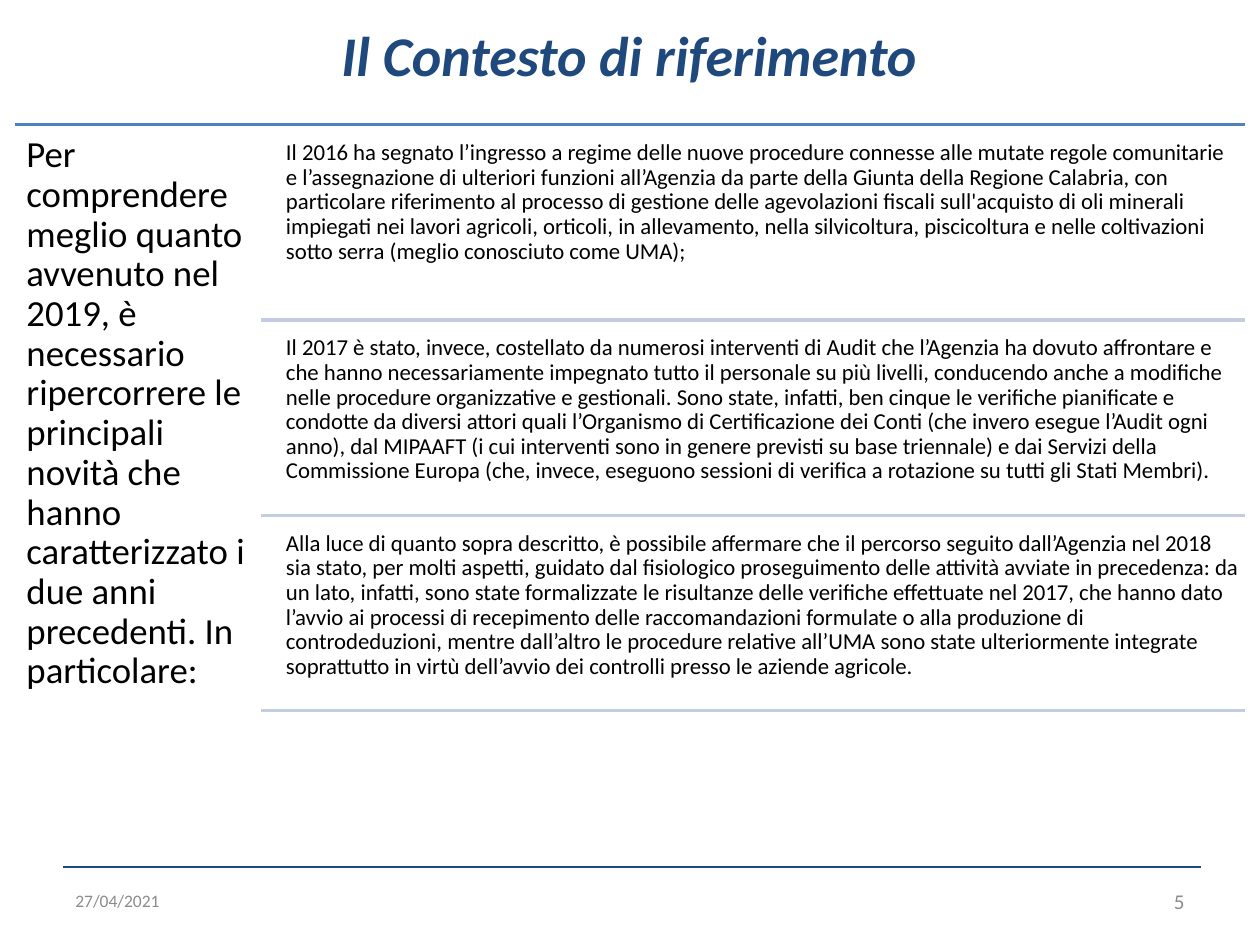
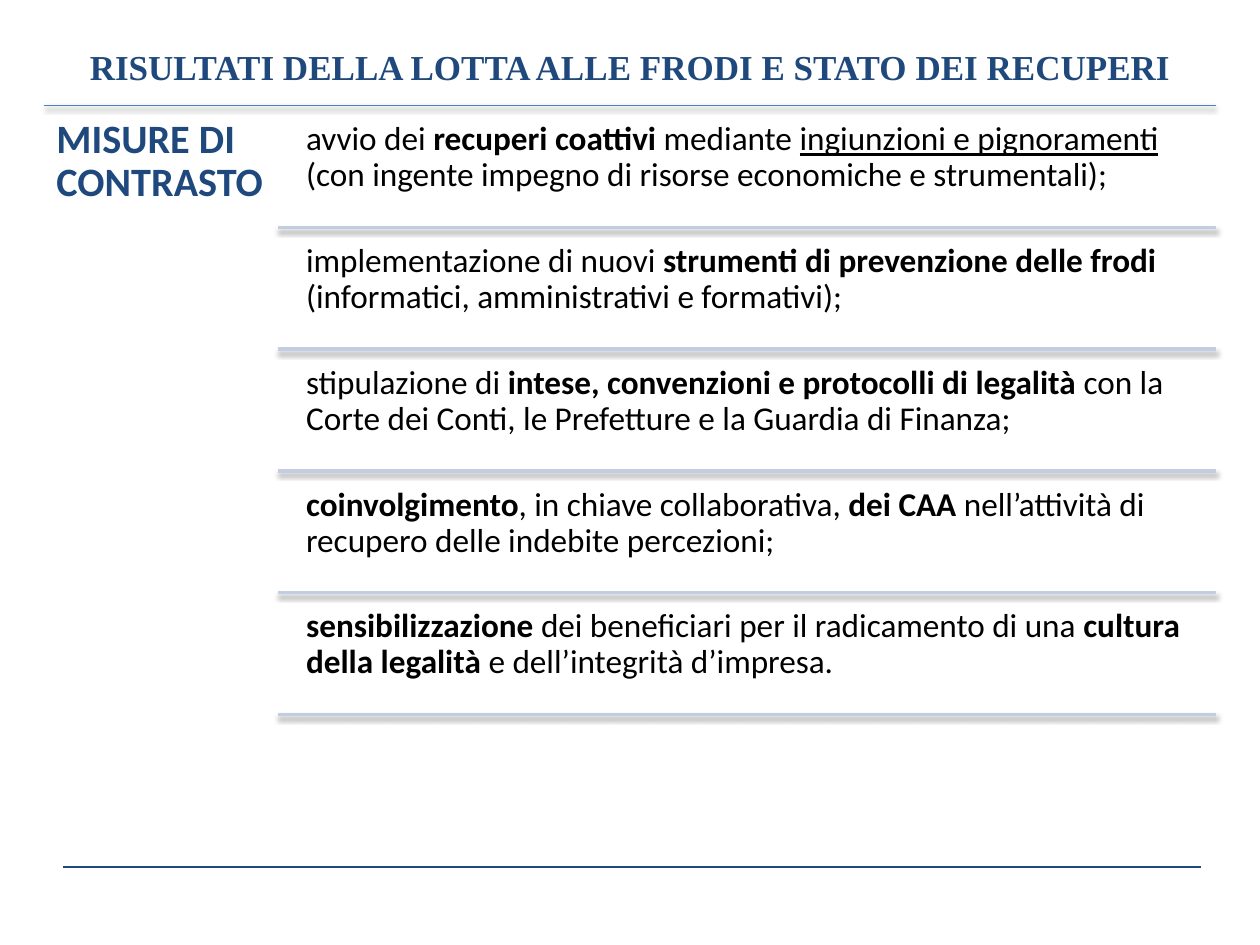
from lxml import etree
from pptx import Presentation
from pptx.dml.color import RGBColor
from pptx.enum.shapes import MSO_CONNECTOR
from pptx.enum.text import MSO_ANCHOR, PP_ALIGN
from pptx.oxml.ns import qn
from pptx.util import Inches, Pt

STRAIGHT = MSO_CONNECTOR.STRAIGHT
TOP, MIDDLE = MSO_ANCHOR.TOP, MSO_ANCHOR.MIDDLE
LEFT, CENTER, RIGHT = PP_ALIGN.LEFT, PP_ALIGN.CENTER, PP_ALIGN.RIGHT

NAVY = RGBColor(0x1F, 0x49, 0x7D)
BLUE = RGBColor(0x4F, 0x81, 0xBD)
PALE = RGBColor(0xC2, 0xCD, 0xE1)
GREY = RGBColor(0x8C, 0x8C, 0x8C)
BLACK = RGBColor(0, 0, 0)
SANS, SERIF = "Calibri", "Times New Roman"

CONTEXT = {
    "title": "Il Contesto di riferimento",
    "title_box": (0.1, 0.11, 9.79, 0.81),
    "title_style": dict(size=32, color=NAVY, bold=True, italic=True, align=CENTER),
    "aside": "Per comprendere meglio quanto avvenuto nel 2019, è necessario ripercorrere "
             "le principali novità che hanno caratterizzato i due anni precedenti. "
             "In particolare:",
    "aside_style": dict(size=21, inset=0.09),
    "rows": [
        "Il 2016 ha segnato l’ingresso a regime delle nuove procedure connesse alle mutate "
        "regole comunitarie e l’assegnazione di ulteriori funzioni all’Agenzia da parte "
        "della Giunta della Regione Calabria, con particolare riferimento al processo di "
        "gestione delle agevolazioni fiscali sull'acquisto di oli minerali impiegati nei "
        "lavori agricoli, orticoli, in allevamento, nella silvicoltura, piscicoltura e "
        "nelle coltivazioni sotto serra (meglio conosciuto come UMA);",
        "Il 2017 è stato, invece, costellato da numerosi interventi di Audit che l’Agenzia "
        "ha dovuto affrontare e che hanno necessariamente impegnato tutto il personale su "
        "più livelli, conducendo anche a modifiche nelle procedure organizzative e "
        "gestionali. Sono state, infatti, ben cinque le verifiche pianificate e condotte "
        "da diversi attori quali l’Organismo di Certificazione dei Conti (che invero "
        "esegue l’Audit ogni anno), dal MIPAAFT (i cui interventi sono in genere previsti "
        "su base triennale) e dai Servizi della Commissione Europa (che, invece, eseguono "
        "sessioni di verifica a rotazione su tutti gli Stati Membri).",
        "Alla luce di quanto sopra descritto, è possibile affermare che il percorso "
        "seguito dall’Agenzia nel 2018 sia stato, per molti aspetti, guidato dal "
        "fisiologico proseguimento delle attività avviate in precedenza: da un lato, "
        "infatti, sono state formalizzate le risultanze delle verifiche effettuate nel "
        "2017, che hanno dato l’avvio ai processi di recepimento delle raccomandazioni "
        "formulate o alla produzione di controdeduzioni, mentre dall’altro le procedure "
        "relative all’UMA sono state ulteriormente integrate soprattutto in virtù "
        "dell’avvio dei controlli presso le aziende agricole.",
    ],
    "row_style": dict(size=13, inset=0.05),
    "left": 0.12, "split": 2.07, "right": 9.88, "top": 0.99, "bottom": 5.64,
    "indent": 0.15, "gap": 0.08, "rule_width": 2,
    "shadow_alphas": (None, None),
    "footer": ("27/04/2021", "5"),
}

# Runs of a row are (text, style) pairs: "b" is bold, "u" is underlined.
MEASURES = {
    "title": "RISULTATI DELLA LOTTA ALLE FRODI E STATO DEI RECUPERI",
    "title_box": (0.5, 0.3, 9, 0.46),
    "title_style": dict(size=20, color=NAVY, font=SERIF, bold=True, align=CENTER,
                        anchor=MIDDLE),
    "aside": "MISURE DI CONTRASTO",
    "aside_style": dict(size=23, color=NAVY, bold=True, inset=0.1),
    "rows": [
        [("avvio dei ", ""), ("recuperi coattivi", "b"), (" mediante ", ""),
         ("ingiunzioni e pignoramenti", "u"),
         (" (con ingente impegno di risorse economiche e strumentali);", "")],
        [("implementazione di nuovi ", ""),
         ("strumenti di prevenzione delle frodi ", "b"),
         ("(informatici, amministrativi e formativi);", "")],
        [("stipulazione di ", ""),
         ("intese, convenzioni e protocolli di legalità", "b"),
         (" con la Corte dei Conti, le Prefetture e la Guardia di Finanza;", "")],
        [("coinvolgimento", "b"), (", in chiave collaborativa, ", ""), ("dei CAA", "b"),
         (" nell’attività di recupero delle indebite percezioni;", "")],
        [("sensibilizzazione ", "b"), ("dei beneficiari per il radicamento di una ", ""),
         ("cultura della legalità", "b"), (" e dell’integrità d’impresa.", "")],
    ],
    "row_style": dict(size=19, inset=0.08),
    "left": 0.35, "split": 2.21, "right": 9.65, "top": 0.84, "bottom": 5.67,
    "indent": 0.14, "gap": 0.05, "rule_width": 0.75,
    "shadow_alphas": (35, 38),
    "footer": None,
}


def add_text(slide, box, content, size, color=BLACK, font=SANS, bold=False, italic=False,
             align=LEFT, anchor=TOP, inset=None, spacing=None):
    """Write a string, or a list of (text, style) runs, as one paragraph."""
    frame = slide.shapes.add_textbox(*map(Inches, box)).text_frame
    frame.word_wrap = True
    frame.vertical_anchor = anchor
    if inset is not None:
        frame.margin_left = frame.margin_right = Inches(inset)
        frame.margin_top = frame.margin_bottom = Inches(inset)
    paragraph = frame.paragraphs[0]
    paragraph.alignment = align
    paragraph.line_spacing = spacing
    runs = [(content, "")] if isinstance(content, str) else content
    for text, style in runs:
        run = paragraph.add_run()
        run.text = text
        run.font.name, run.font.size = font, Pt(size)
        run.font.color.rgb = color
        run.font.bold = bold or style == "b"
        run.font.italic = italic
        run.font.underline = style == "u"


def add_rule(slide, left, right, y, color, width, shadow_alpha=None):
    """Draw a horizontal line, with a soft shadow below it if an alpha is given."""
    rule = slide.shapes.add_connector(
        STRAIGHT, Inches(left), Inches(y), Inches(right), Inches(y))
    rule.line.color.rgb = color
    rule.line.width = Pt(width)
    effects = etree.SubElement(rule._element.spPr, qn("a:effectLst"))
    if shadow_alpha:
        shadow = etree.SubElement(
            effects, qn("a:outerShdw"), blurRad=str(Pt(3.1)), dist=str(Pt(1.6)),
            dir="5400000", rotWithShape="0")
        black = etree.SubElement(shadow, qn("a:srgbClr"), val="000000")
        etree.SubElement(black, qn("a:alpha"), val=str(shadow_alpha * 1000))


def add_footer(slide, footer):
    add_rule(slide, 0.5, 9.53, 6.88, NAVY, 1.5)
    if footer:
        date, number = footer
        add_text(slide, (0.5, 6.95, 2.33, 0.4), date, 10, GREY, anchor=MIDDLE)
        add_text(slide, (7.17, 6.95, 2.33, 0.4), number, 12, GREY, align=RIGHT,
                 anchor=MIDDLE)


def add_ruled_list(slide, topic):
    """Place the aside on the left and equal, ruled rows on the right."""
    left, split, right = topic["left"], topic["split"], topic["right"]
    top, bottom, gap = topic["top"], topic["bottom"], topic["gap"]
    head_alpha, row_alpha = topic["shadow_alphas"]
    add_rule(slide, left, right, top, BLUE, topic["rule_width"], head_alpha)
    add_text(slide, (left, top, split - left, bottom - top), topic["aside"],
             spacing=0.9, **topic["aside_style"])
    pitch = (bottom - top) / len(topic["rows"])
    row_left = split + topic["indent"]
    for index, row in enumerate(topic["rows"]):
        row_top = top + index * pitch
        add_text(slide, (row_left, row_top + gap, right - row_left, pitch - gap), row,
                 spacing=0.9, **topic["row_style"])
        add_rule(slide, split, right, row_top + pitch, PALE, 2, row_alpha)


def main():
    deck = Presentation()
    deck.slide_width, deck.slide_height = Inches(10), Inches(7.5)
    for topic in (CONTEXT, MEASURES):
        slide = deck.slides.add_slide(deck.slide_layouts[6])
        add_footer(slide, topic["footer"])
        add_text(slide, topic["title_box"], topic["title"], **topic["title_style"])
        add_ruled_list(slide, topic)
    deck.save("out.pptx")


if __name__ == "__main__":
    main()
